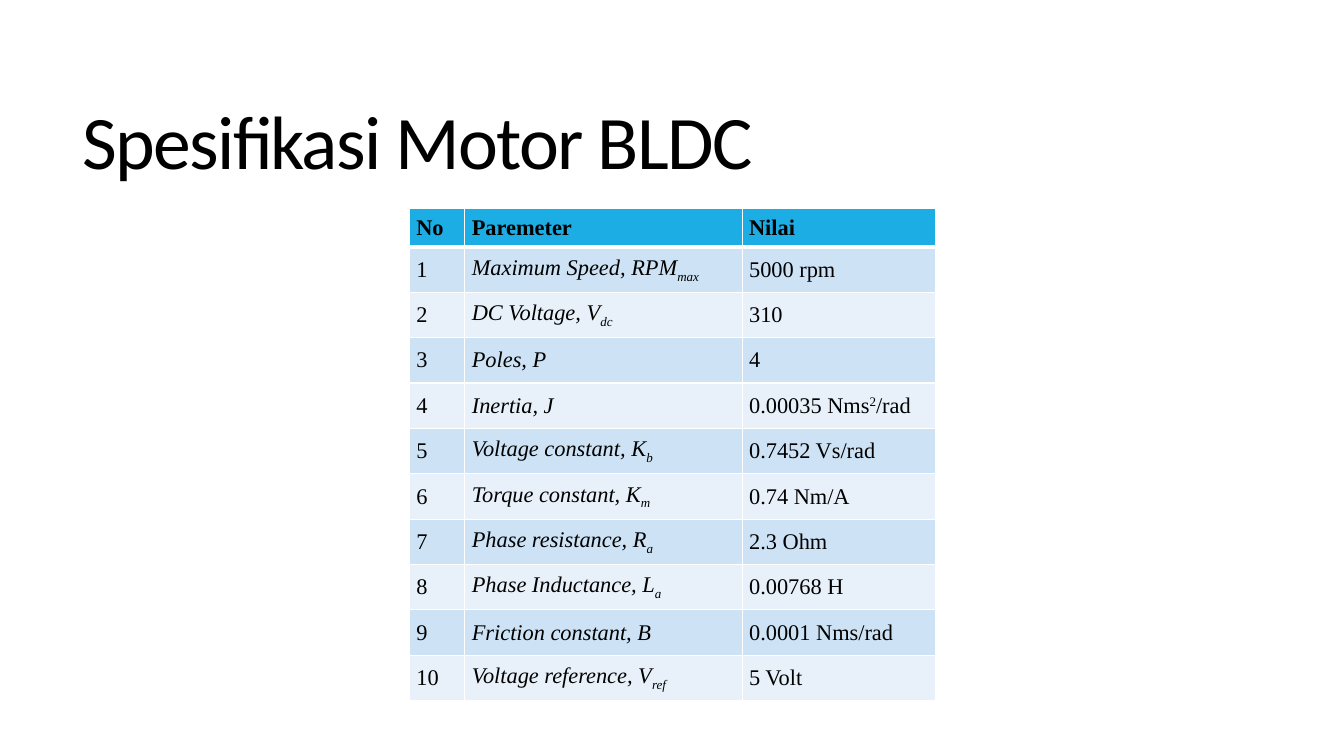
from dataclasses import dataclass

from lxml.etree import SubElement
from pptx import Presentation
from pptx.dml.color import RGBColor
from pptx.enum.text import MSO_ANCHOR
from pptx.oxml.ns import qn
from pptx.util import Emu, Inches, Pt

SLIDE_WIDTH, SLIDE_HEIGHT = Inches(13.33), Inches(7.5)
BLACK, WHITE = "000000", "FFFFFF"
HEADER_FILL = "1CADE4"
BAND_FILLS = ("CDE3F5", "E8F1FA")
COLUMN_WIDTHS = (0.55, 2.75, 1.92)
HEADER_HEIGHT, ROW_HEIGHT = 0.38, 0.45
THIN, THICK = 1, 3
SUBSCRIPT, SUPERSCRIPT = -25, 30


@dataclass(frozen=True)
class Span:
    text: str
    baseline: int = 0


@dataclass(frozen=True)
class Specification:
    parameter: str
    subscript: str
    value: tuple[Span, ...]


HEADINGS = ("No", "Paremeter", "Nilai")
SPECIFICATIONS = (
    Specification("Maximum Speed, RPM", "max", (Span("5000 rpm"),)),
    Specification("DC Voltage, V", "dc", (Span("310"),)),
    Specification("Poles, P", "", (Span("4"),)),
    Specification("Inertia, J", "", (Span("0.00035 Nms"), Span("2", SUPERSCRIPT), Span("/rad"))),
    Specification("Voltage constant, K", "b", (Span("0.7452 Vs/rad"),)),
    Specification("Torque constant, K", "m", (Span("0.74 Nm/A"),)),
    Specification("Phase resistance, R", "a", (Span("2.3 Ohm"),)),
    Specification("Phase Inductance, L", "a", (Span("0.00768 H"),)),
    Specification("Friction constant, B", "", (Span("0.0001 Nms/rad"),)),
    Specification("Voltage reference, V", "ref", (Span("5 Volt"),)),
)


def color(hex_code: str) -> RGBColor:
    return RGBColor.from_string(hex_code)


def across(share: float) -> Emu:
    """Length as a share of the slide width."""
    return Emu(round(SLIDE_WIDTH * share))


def down(share: float) -> Emu:
    """Length as a share of the slide height."""
    return Emu(round(SLIDE_HEIGHT * share))


def write(frame, spans: tuple[Span, ...], *, size: float = 16, font: str = "Times New Roman",
          ink: str = BLACK, bold: bool = False, italic: bool = False,
          line_spacing: float = 1, tracking: int = 0) -> None:
    """Fill the first paragraph; tracking is in hundredths of a point."""
    paragraph = frame.paragraphs[0]
    paragraph.line_spacing = line_spacing
    for span in spans:
        run = paragraph.add_run()
        run.text = span.text
        run.font.size, run.font.name = Pt(size), font
        run.font.bold, run.font.italic = bold, italic
        run.font.color.rgb = color(ink)
        properties = run.font._element
        if span.baseline:
            properties.set("baseline", str(span.baseline * 1000))
        if tracking:
            properties.set("spc", str(tracking))


def draw_borders(cell, top: float, bottom: float) -> None:
    properties = cell._tc.get_or_add_tcPr()
    for side, width in (("L", THIN), ("R", THIN), ("T", top), ("B", bottom)):
        line = SubElement(properties, qn(f"a:ln{side}"), w=str(Pt(width)))
        fill = SubElement(line, qn("a:solidFill"))
        SubElement(fill, qn("a:srgbClr"), val=WHITE)


def fill_cell(cell, spans: tuple[Span, ...], fill: str, *, top: float = THIN,
              bottom: float = THIN, bold: bool = False, italic: bool = False) -> None:
    draw_borders(cell, top, bottom)
    cell.fill.solid()
    cell.fill.fore_color.rgb = color(fill)
    cell.vertical_anchor = MSO_ANCHOR.MIDDLE
    cell.margin_left = cell.margin_right = Inches(0.07)
    cell.margin_top = cell.margin_bottom = 0
    write(cell.text_frame, spans, bold=bold, italic=italic)


def add_title(slide, title: str) -> None:
    box = slide.shapes.add_textbox(across(0.054), down(0.073), across(0.884), down(0.241))
    frame = box.text_frame
    frame.word_wrap = True
    frame.vertical_anchor = MSO_ANCHOR.MIDDLE
    write(frame, (Span(title),), size=54, font="Calibri", line_spacing=0.85, tracking=-120)


def add_specification_table(slide) -> None:
    row_heights = (HEADER_HEIGHT,) + (ROW_HEIGHT,) * len(SPECIFICATIONS)
    table = slide.shapes.add_table(
        len(row_heights), len(COLUMN_WIDTHS), across(0.3046), down(0.276),
        Inches(sum(COLUMN_WIDTHS)), Inches(sum(row_heights))).table
    for column, width in zip(table.columns, COLUMN_WIDTHS):
        column.width = Inches(width)
    for row, height in zip(table.rows, row_heights):
        row.height = Inches(height)

    for column, heading in enumerate(HEADINGS):
        fill_cell(table.cell(0, column), (Span(heading),), HEADER_FILL, bottom=THICK, bold=True)
    for number, item in enumerate(SPECIFICATIONS, start=1):
        parameter = (Span(item.parameter),)
        if item.subscript:
            parameter += (Span(item.subscript, SUBSCRIPT),)
        fill = BAND_FILLS[(number - 1) % len(BAND_FILLS)]
        for column, spans in enumerate(((Span(str(number)),), parameter, item.value)):
            fill_cell(table.cell(number, column), spans, fill,
                      top=THICK if number == 1 else THIN, italic=spans is parameter)


def main() -> None:
    presentation = Presentation()
    presentation.slide_width, presentation.slide_height = SLIDE_WIDTH, SLIDE_HEIGHT
    slide = presentation.slides.add_slide(presentation.slide_layouts[6])
    slide.background.fill.solid()
    slide.background.fill.fore_color.rgb = color(WHITE)
    add_title(slide, "Spesifikasi Motor BLDC")
    add_specification_table(slide)
    presentation.save("out.pptx")


if __name__ == "__main__":
    main()
